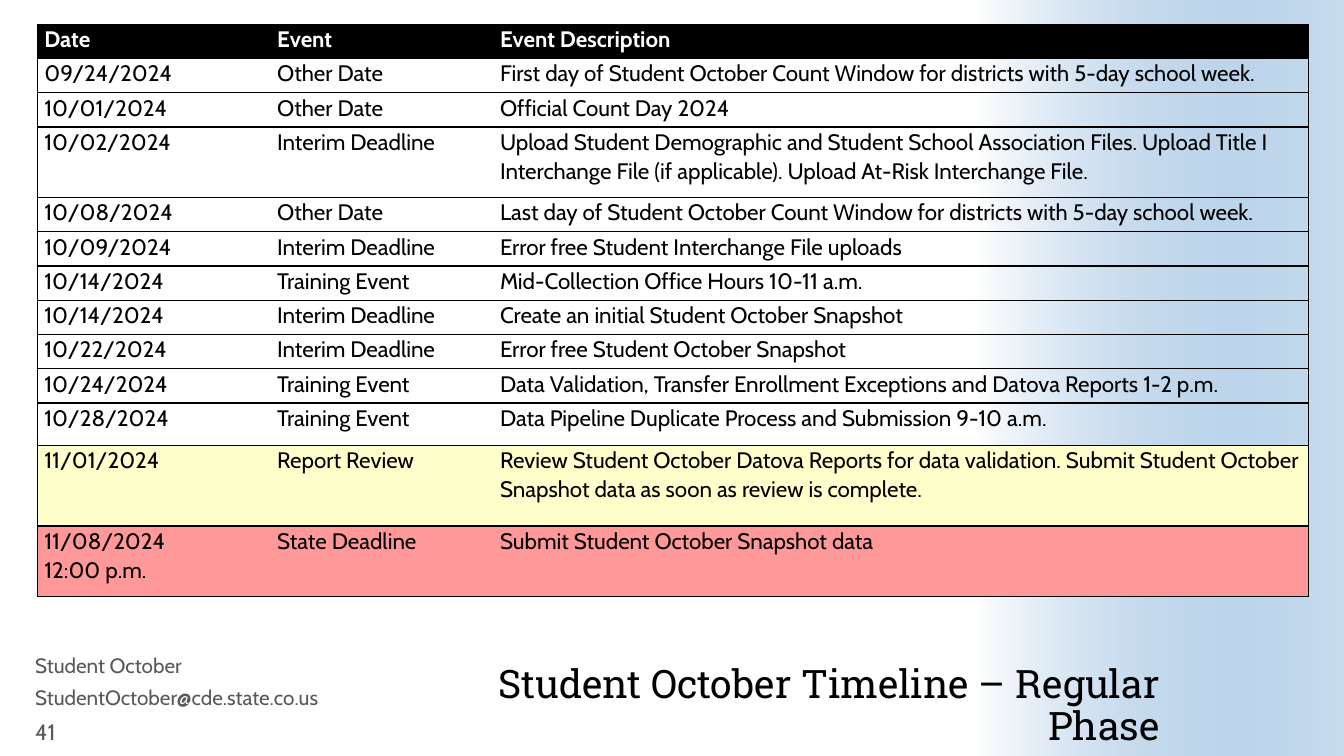
from lxml import etree
from pptx import Presentation
from pptx.dml.color import RGBColor
from pptx.enum.shapes import MSO_SHAPE
from pptx.enum.text import MSO_ANCHOR, PP_ALIGN
from pptx.oxml.ns import qn
from pptx.util import Inches, Pt

RECT = MSO_SHAPE.RECTANGLE
TOP, MIDDLE, BOTTOM = MSO_ANCHOR.TOP, MSO_ANCHOR.MIDDLE, MSO_ANCHOR.BOTTOM
LEFT, RIGHT = PP_ALIGN.LEFT, PP_ALIGN.RIGHT

BLACK = RGBColor(0x00, 0x00, 0x00)
WHITE = RGBColor(0xFF, 0xFF, 0xFF)
BLUE = RGBColor(0x48, 0x8B, 0xC9)
GRAY = RGBColor(0x59, 0x59, 0x59)
YELLOW = RGBColor(0xFF, 0xFF, 0xCC)
RED = RGBColor(0xFF, 0x99, 0x99)

BODY_FONT, TITLE_FONT = "Cabin", "Roboto Slab"
COLUMN_WIDTHS = [2.31, 2.21, 8.09]
ROW_HEIGHT = 0.34
ROW_HEIGHTS = {3: 0.7, 10: 0.42, 11: 0.8, 12: 0.7}
ROW_FILLS = {0: BLACK, 11: YELLOW, 12: RED}
EVENTS = [
    ("Date", "Event", "Event Description"),
    ("09/24/2024", "Other Date",
     "First day of Student October Count Window for districts with 5-day school week."),
    ("10/01/2024", "Other Date", "Official Count Day 2024"),
    ("10/02/2024", "Interim Deadline",
     "Upload Student Demographic and Student School Association Files. "
     "Upload Title I Interchange File (if applicable). Upload At-Risk Interchange File."),
    ("10/08/2024", "Other Date",
     "Last day of Student October Count Window for districts with 5-day school week."),
    ("10/09/2024", "Interim Deadline", "Error free Student Interchange File uploads"),
    ("10/14/2024", "Training Event", "Mid-Collection Office Hours 10-11 a.m."),
    ("10/14/2024", "Interim Deadline", "Create an initial Student October Snapshot"),
    ("10/22/2024", "Interim Deadline", "Error free Student October Snapshot"),
    ("10/24/2024", "Training Event",
     "Data Validation, Transfer Enrollment Exceptions and Datova Reports 1-2 p.m."),
    ("10/28/2024", "Training Event",
     "Data Pipeline Duplicate Process and Submission 9-10 a.m."),
    ("11/01/2024", "Report Review",
     "Review Student October Datova Reports for data validation. "
     "Submit Student October Snapshot data as soon as review is complete."),
    ("11/08/2024\n12:00 p.m.", "State Deadline", "Submit Student October Snapshot data"),
]


def add_run(p, text, size, color, font=BODY_FONT, bold=False):
    r = p.add_run()
    r.text = text
    r.font.size = Pt(size)
    r.font.name = font
    r.font.bold = bold
    r.font.color.rgb = color


def add_text(slide, box, text, size, color, font=BODY_FONT, anchor=TOP,
             align=LEFT, spacing=1.0, inset=None):
    tf = slide.shapes.add_textbox(*map(Inches, box)).text_frame
    tf.word_wrap = True
    tf.vertical_anchor = anchor
    if inset is not None:
        tf.margin_left = tf.margin_right = Inches(inset)
        tf.margin_top = tf.margin_bottom = Inches(inset)
    p = tf.paragraphs[0]
    p.alignment = align
    p.line_spacing = spacing
    add_run(p, text, size, color, font)


def add_background(slide, box):
    left, top, width, height = box
    s = slide.shapes.add_shape(RECT, Inches(left + (width - height) / 2),
                               Inches(top + (height - width) / 2),
                               Inches(height), Inches(width))
    s.rotation = 270
    s.shadow.inherit = False
    s.line.fill.background()
    s.fill.gradient()
    s.fill.gradient_angle = 270
    for stop, position, color in zip(s.fill.gradient_stops, (0, 1), (WHITE, BLUE)):
        stop.position = position
        stop.color.rgb = color
    blue = s._element.xpath(".//a:gs/a:srgbClr")[1]
    etree.SubElement(blue, qn("a:alpha"), val="30000")


def set_borders(cell, sides):
    tcPr = cell._tc.get_or_add_tcPr()
    for side in "LRTB":
        ln = etree.SubElement(tcPr, qn("a:ln" + side), w=str(Pt(1)))
        if side in sides:
            fill = etree.SubElement(ln, qn("a:solidFill"))
            etree.SubElement(fill, qn("a:srgbClr"), val=str(BLACK))
        else:
            etree.SubElement(ln, qn("a:noFill"))


def fill_cell(cell, text, row, sides):
    cell.margin_left = cell.margin_right = Inches(0.07)
    cell.margin_top = cell.margin_bottom = 0
    set_borders(cell, sides)
    if row in ROW_FILLS:
        cell.fill.solid()
        cell.fill.fore_color.rgb = ROW_FILLS[row]
    else:
        cell.fill.background()
    tf = cell.text_frame
    for i, line in enumerate(text.split("\n")):
        p = tf.add_paragraph() if i else tf.paragraphs[0]
        p.line_spacing = 1.07
        add_run(p, line, 16, BLACK if row else WHITE, bold=row == 0)


def add_timeline(slide, box):
    table = slide.shapes.add_table(len(EVENTS), len(COLUMN_WIDTHS),
                                   *map(Inches, box)).table
    table.horz_banding = False
    for column, width in zip(table.columns, COLUMN_WIDTHS):
        column.width = Inches(width)
    for i, event in enumerate(EVENTS):
        table.rows[i].height = Inches(ROW_HEIGHTS.get(i, ROW_HEIGHT))
        for j, (text, sides) in enumerate(zip(event, ("LTB", "TB", "RTB"))):
            fill_cell(table.cell(i, j), text, i, sides)


def add_footer(slide, box):
    left, top, width, height = box
    for i, text in enumerate(("Student October", "StudentOctober@cde.state.co.us")):
        add_text(slide, (left, top + i * 0.32, width, height), text, 14.8, GRAY,
                 spacing=0.8)
    add_text(slide, (left, top + 0.63, 0.85, height), "41", 16, GRAY, anchor=MIDDLE)


def main():
    prs = Presentation()
    prs.slide_width, prs.slide_height = Inches(13.33), Inches(7.5)
    slide = prs.slides.add_slide(prs.slide_layouts[6])
    add_background(slide, (9.67, 0, 3.66, 7.5))
    add_text(slide, (4.26, 6.45, 7.24, 0.98), "Student October Timeline – Regular Phase",
             28, BLACK, TITLE_FONT, BOTTOM, RIGHT, 0.9, 0)
    add_timeline(slide, (0.37, 0.24, 12.6, 6.08))
    add_footer(slide, (0.25, 6.47, 3.89, 0.31))
    prs.save("out.pptx")


if __name__ == "__main__":
    main()
